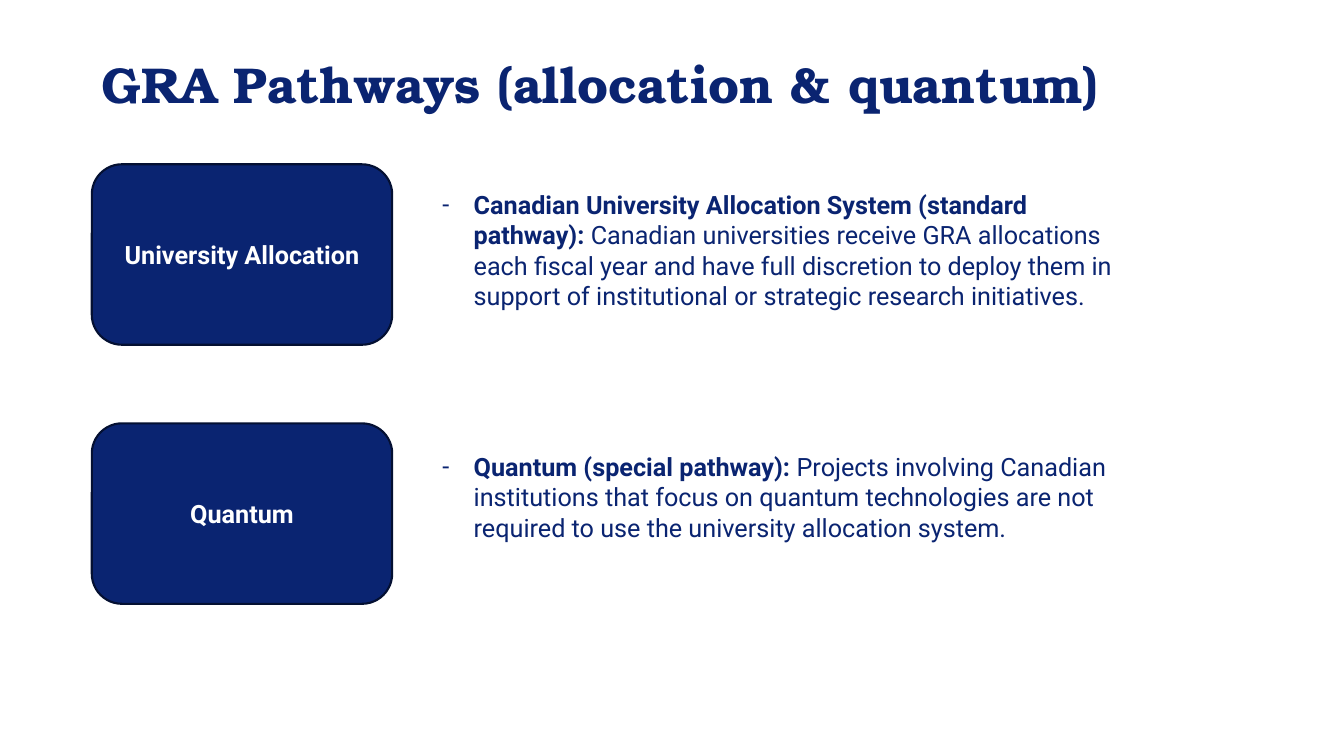
from dataclasses import dataclass
from lxml.etree import SubElement
from pptx import Presentation
from pptx.dml.color import RGBColor
from pptx.enum.shapes import MSO_SHAPE
from pptx.enum.text import MSO_ANCHOR, PP_ALIGN
from pptx.oxml.ns import qn
from pptx.util import Inches, Pt


@dataclass(frozen=True)
class Theme:
    navy: RGBColor = RGBColor.from_string("0A2471")
    outline: RGBColor = RGBColor.from_string("041032")
    white: RGBColor = RGBColor.from_string("FFFFFF")
    heading_font: str = "TeX Gyre Bonum"
    body_font: str = "Roboto"
    heading_size: int = 36
    body_size: int = 18


theme = Theme()
deck = Presentation()
deck.slide_width, deck.slide_height = Inches(13.33), Inches(7.5)
column, row = deck.slide_width / 100, deck.slide_height / 100
slide = deck.slides.add_slide(deck.slide_layouts[6])


def place(left, top, width, height):
    return [round(n) for n in (left * column, top * row, width * column, height * row)]


def write(holder, *runs, font=theme.body_font, size=theme.body_size, color=theme.navy,
          align=PP_ALIGN.LEFT, anchor=MSO_ANCHOR.TOP, spacing=1.0, bullet=None):
    frame = holder.text_frame
    frame.word_wrap = True
    frame.vertical_anchor = anchor
    paragraph = frame.paragraphs[0]
    paragraph.alignment = align
    paragraph.line_spacing = spacing
    if bullet:
        properties = paragraph._p.get_or_add_pPr()
        properties.set("marL", str(Inches(0.31)))
        properties.set("indent", str(-Inches(0.31)))
        SubElement(properties, qn("a:buFont")).set("typeface", font)
        SubElement(properties, qn("a:buChar")).set("char", bullet)
    for text, bold in runs:
        run = paragraph.add_run()
        run.text = text
        run.font.name, run.font.size, run.font.bold = font, Pt(size), bold
        run.font.color.rgb = color


margin = 6.83
heading = slide.shapes.add_textbox(*place(margin, 6, 86.25, 11.07))
write(heading, ("GRA Pathways (allocation & quantum)", True), font=theme.heading_font,
      size=theme.heading_size, anchor=MSO_ANCHOR.MIDDLE, spacing=0.9)

pathways = [
    ("University Allocation", 24.4, 17.47,
     "Canadian University Allocation System (standard pathway): ",
     "Canadian universities receive GRA allocations each fiscal year and have full discretion "
     "to deploy them in support of institutional or strategic research initiatives."),
    ("Quantum", 59.07, 13.47,
     "Quantum (special pathway):",
     " Projects involving Canadian institutions that focus on quantum technologies are not "
     "required to use the university allocation system."),
]

for index, (pathway, detail_top, detail_height, lead, explanation) in enumerate(pathways):
    card = slide.shapes.add_shape(MSO_SHAPE.ROUNDED_RECTANGLE,
                                  *place(margin, 21.73 + index * 34.27, 22.35, 23.87))
    card.shadow.inherit = False
    card.fill.solid()
    card.fill.fore_color.rgb = theme.navy
    card.line.color.rgb = theme.outline
    card.line.width = Pt(1.5)
    write(card, (pathway, True), color=theme.white, align=PP_ALIGN.CENTER,
          anchor=MSO_ANCHOR.MIDDLE)

    detail = slide.shapes.add_textbox(*place(32.18, detail_top, 51.53, detail_height))
    write(detail, (lead, True), (explanation, False), bullet="-")

deck.save("out.pptx")
